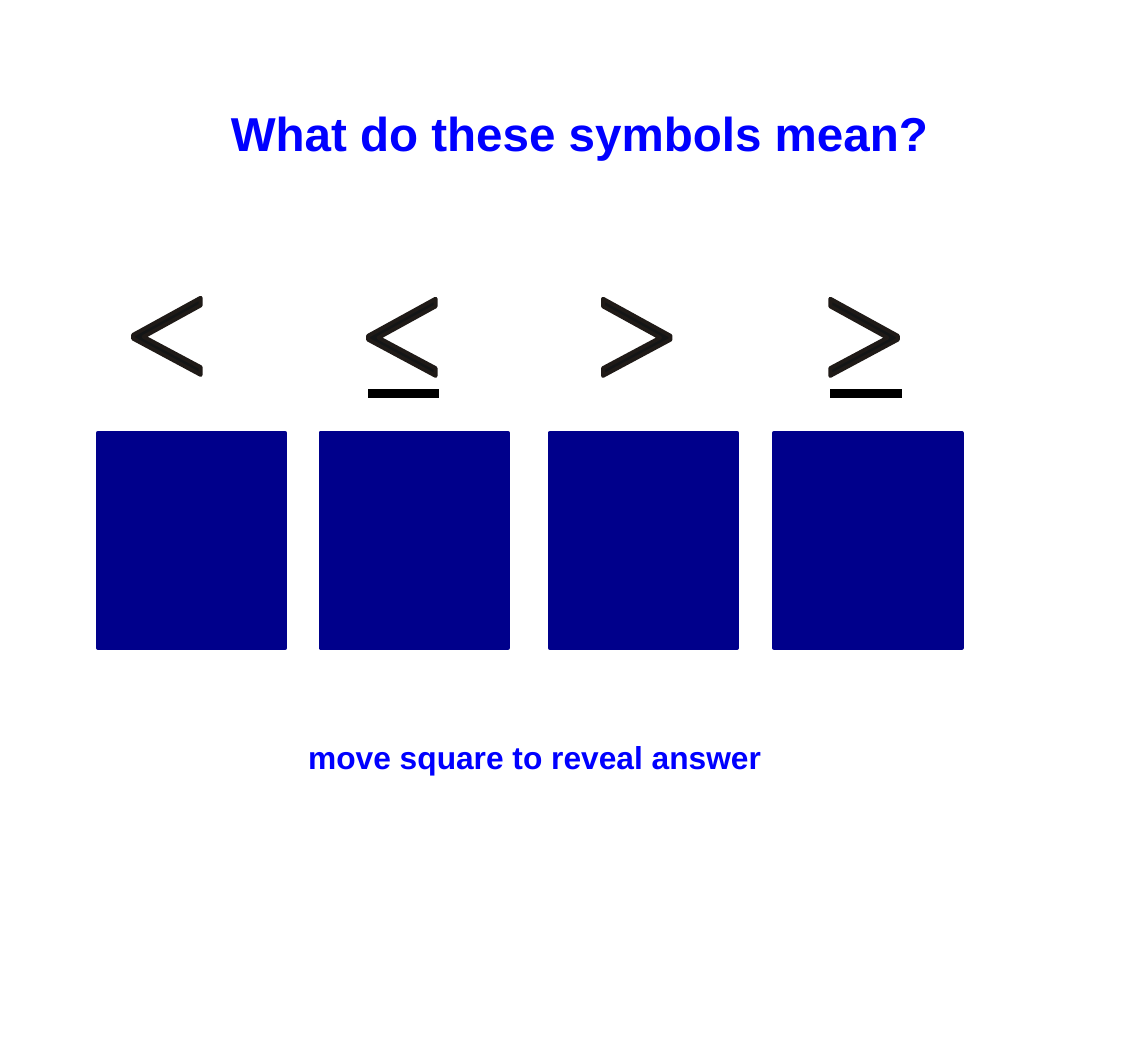
import pptx
import pptx.util
import pptx.dml.color
import pptx.enum.shapes
import pptx.enum.text
import pptx.oxml
import pptx.oxml.ns
from pptx.util import Inches

COLORS = {"text": "0000FF", "square": "00008B", "symbol": "131516",
          "symbol_edge": "1F1A17", "bar": "000000"}
TITLE = ("What do these symbols mean?", 0.86, 1.03, 10.47, 0.72, 36,
         pptx.enum.text.PP_ALIGN.CENTER)
HINT = ("move square to reveal answer", 3.12, 7.7, 6.79, 0.52, 24,
        pptx.enum.text.PP_ALIGN.LEFT)
SYMBOLS = [
    {"left": 1.4, "top": 3.13, "points": "left", "bar": False, "square": 1.03},
    {"left": 3.87, "top": 3.14, "points": "left", "bar": True, "square": 3.37},
    {"left": 6.34, "top": 3.14, "points": "right", "bar": False, "square": 5.78},
    {"left": 8.73, "top": 3.14, "points": "right", "bar": True, "square": 8.14},
]
CHEVRON = [(0.71, 0.08), (0.11, 0.41), (0.71, 0.73), (0.71, 0.81),
           (0, 0.43), (0, 0.39), (0.71, 0)]
CHEVRON_WIDTH = 0.71
BAR_TOP, BAR_WIDTH = 4.14, 0.75
SQUARE_TOP, SQUARE_WIDTH, SQUARE_HEIGHT = 4.55, 1.97, 2.26


def color(name):
    return pptx.dml.color.RGBColor.from_string(COLORS[name])


def add_text(slide, text, left, top, width, height, size, alignment):
    box = slide.shapes.add_textbox(Inches(left), Inches(top), Inches(width), Inches(height))
    frame = box.text_frame
    frame.word_wrap = True
    frame.margin_left = frame.margin_right = Inches(0.12)
    frame.margin_top = frame.margin_bottom = Inches(0.06)
    frame.text = text
    paragraph = frame.paragraphs[0]
    paragraph.alignment = alignment
    font = paragraph.runs[0].font
    font.name, font.size, font.bold = "Arial", pptx.util.Pt(size), True
    font.color.rgb = color("text")


def paint(shape, fill, edge):
    shape.shadow.inherit = False
    shape.fill.solid()
    shape.fill.fore_color.rgb = color(fill)
    shape.line.color.rgb = color(edge)
    shape.line.width = pptx.util.Pt(3)
    outline = shape.element.spPr.find(pptx.oxml.ns.qn("a:ln"))
    outline.append(pptx.oxml.parse_xml(f"<a:round {pptx.oxml.ns.nsdecls('a')}/>"))


def add_chevron(slide, left, top, points):
    corners = [(Inches(left + (x if points == "left" else CHEVRON_WIDTH - x)), Inches(top + y))
               for x, y in CHEVRON]
    builder = slide.shapes.build_freeform(*corners[0])
    builder.add_line_segments(corners[1:], close=True)
    paint(builder.convert_to_shape(), "symbol", "symbol_edge")


def add_bar(slide, left):
    bar = slide.shapes.add_connector(
        pptx.enum.shapes.MSO_CONNECTOR.STRAIGHT,
        Inches(left), Inches(BAR_TOP), Inches(left + BAR_WIDTH), Inches(BAR_TOP))
    bar.line.color.rgb = color("bar")
    bar.line.width = pptx.util.Pt(7)
    bar.element.spPr.append(
        pptx.oxml.parse_xml(f"<a:effectLst {pptx.oxml.ns.nsdecls('a')}/>"))


def add_square(slide, left):
    square = slide.shapes.add_shape(
        pptx.enum.shapes.MSO_SHAPE.RECTANGLE, Inches(left), Inches(SQUARE_TOP),
        Inches(SQUARE_WIDTH), Inches(SQUARE_HEIGHT))
    paint(square, "square", "square")


def main():
    presentation = pptx.Presentation()
    presentation.slide_width = Inches(12.07)
    presentation.slide_height = Inches(11.11)
    slide = presentation.slides.add_slide(presentation.slide_layouts[6])
    add_text(slide, *TITLE)
    for symbol in SYMBOLS:
        add_chevron(slide, symbol["left"], symbol["top"], symbol["points"])
        if symbol["bar"]:
            add_bar(slide, symbol["left"])
        add_square(slide, symbol["square"])
    add_text(slide, *HINT)
    presentation.save("out.pptx")


if __name__ == "__main__":
    main()
